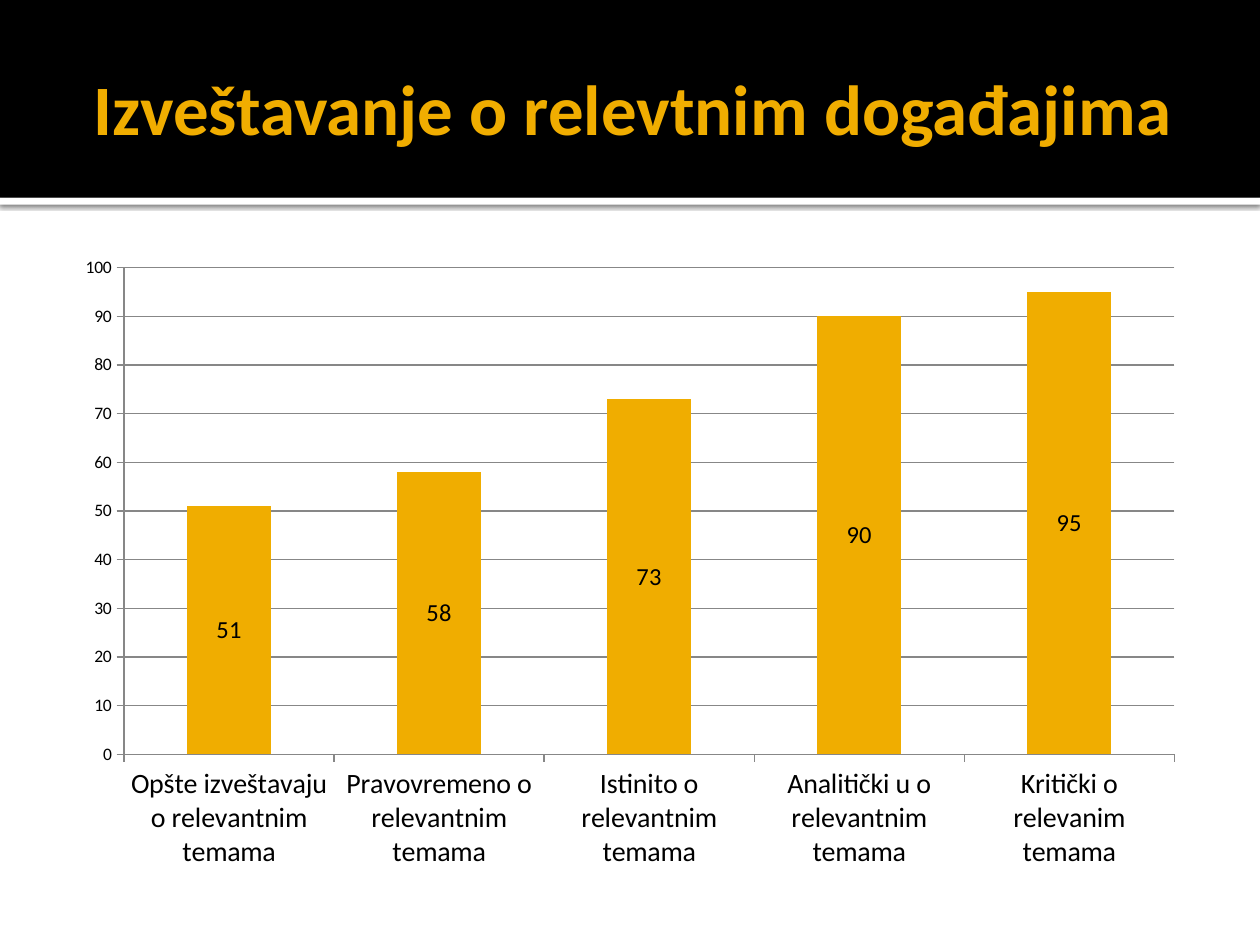
from lxml.etree import SubElement
from pptx import Presentation
from pptx.chart.data import CategoryChartData
from pptx.dml.color import RGBColor
from pptx.enum.chart import XL_CHART_TYPE, XL_LABEL_POSITION, XL_TICK_MARK
from pptx.enum.shapes import MSO_SHAPE
from pptx.enum.text import MSO_ANCHOR, PP_ALIGN
from pptx.oxml.ns import qn
from pptx.util import Pt

TITLE = "Izveštavanje o relevtnim događajima"
SERIES = "Series 1"
DATA = [
    ("Opšte izveštavaju o relevantnim temama", 51),
    ("Pravovremeno o relevantnim temama", 58),
    ("Istinito o relevantnim temama", 73),
    ("Analitički u o relevantnim temama", 90),
    ("Kritički o relevanim temama", 95),
]
THEME = {
    "font": "Calibri",
    "gold": RGBColor.from_string("F0AD00"),
    "black": RGBColor.from_string("000000"),
    "white": RGBColor.from_string("FFFFFF"),
    "grid": RGBColor.from_string("878787"),
    "title": 40.5, "axis": 10, "label": 14, "cat": 16,
}
WIDTH, HEIGHT = 720, 540
BAND, STRIP = 113, 4
MARGIN = 36


def style(font, size, color="black", bold=False):
    values = {"name": THEME["font"], "size": Pt(THEME[size]), "bold": bold}
    for key, value in values.items():
        setattr(font, key, value)
    font.color.rgb = THEME[color]


def add_bar(slide, top, height, color):
    bar = slide.shapes.add_shape(
        MSO_SHAPE.RECTANGLE, 0, Pt(top), Pt(WIDTH), Pt(height))
    bar.shadow.inherit = False
    bar.fill.solid()
    bar.fill.fore_color.rgb = THEME[color]
    bar.line.fill.background()
    return bar


def add_shadow(shape):
    """Cast a soft black shadow straight down."""
    effects = shape._element.spPr.find(qn("a:effectLst"))
    outer = SubElement(effects, qn("a:outerShdw"), blurRad=str(Pt(2.5)),
                       dist=str(Pt(0.8)), dir="5400000", rotWithShape="0")
    color = SubElement(outer, qn("a:srgbClr"), val="000000")
    SubElement(color, qn("a:alpha"), val="60000")


def add_title(slide):
    box = slide.shapes.add_textbox(
        Pt(MARGIN), Pt(12), Pt(WIDTH - 2 * MARGIN), Pt(99))
    frame = box.text_frame
    layout = {
        "word_wrap": True, "vertical_anchor": MSO_ANCHOR.MIDDLE,
        "margin_left": Pt(7.2), "margin_right": Pt(3.6),
        "margin_top": Pt(3.6), "margin_bottom": Pt(3.6),
    }
    for key, value in layout.items():
        setattr(frame, key, value)
    line = frame.paragraphs[0]
    line.alignment = PP_ALIGN.CENTER
    run = line.add_run()
    run.text = TITLE
    style(run.font, "title", "gold", True)


def add_graph(slide):
    data = CategoryChartData()
    names, values = zip(*DATA)
    data.categories = names
    data.add_series(SERIES, values)
    chart = slide.shapes.add_chart(
        XL_CHART_TYPE.COLUMN_STACKED, Pt(MARGIN), Pt(140),
        Pt(WIDTH - 2 * MARGIN), Pt(364), data).chart
    chart.has_legend = chart.has_title = False
    style(chart.font, "axis")

    plot = chart.plots[0]
    for key, value in {"gap_width": 150, "overlap": 100,
                       "vary_by_categories": False}.items():
        setattr(plot, key, value)
    fill = plot.series[0].format.fill
    fill.solid()
    fill.fore_color.rgb = THEME["gold"]
    plot.has_data_labels = True
    labels = plot.data_labels
    labels.show_value = True
    labels.position = XL_LABEL_POSITION.CENTER
    style(labels.font, "label")

    across, up = chart.category_axis, chart.value_axis
    for axis, size in ((across, "cat"), (up, "axis")):
        axis.major_tick_mark = XL_TICK_MARK.OUTSIDE
        axis.minor_tick_mark = XL_TICK_MARK.NONE
        style(axis.tick_labels.font, size)
    for key, value in {"minimum_scale": 0, "maximum_scale": 100,
                       "major_unit": 10, "has_major_gridlines": True}.items():
        setattr(up, key, value)
    for part in (across, up, up.major_gridlines):
        part.format.line.color.rgb = THEME["grid"]
        part.format.line.width = Pt(0.75)


def main():
    deck = Presentation()
    deck.slide_width, deck.slide_height = Pt(WIDTH), Pt(HEIGHT)
    slide = deck.slides.add_slide(deck.slide_layouts[6])
    add_shadow(add_bar(slide, BAND, STRIP, "white"))
    add_bar(slide, 0, BAND, "black")
    add_title(slide)
    add_graph(slide)
    deck.save("out.pptx")


if __name__ == "__main__":
    main()
